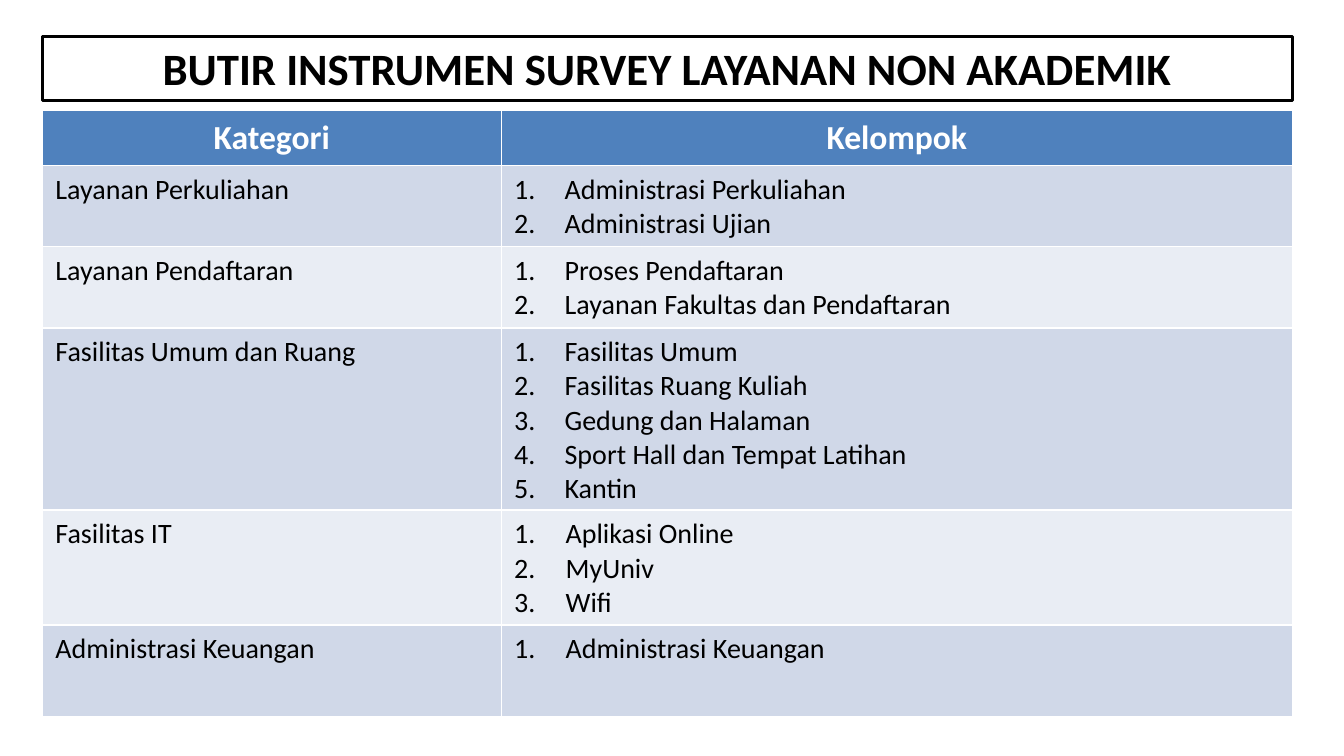
from dataclasses import dataclass

from lxml.etree import SubElement
from pptx import Presentation
from pptx.dml.color import RGBColor
from pptx.enum.shapes import MSO_SHAPE
from pptx.enum.text import MSO_ANCHOR, MSO_AUTO_SIZE, PP_ALIGN
from pptx.oxml.ns import qn
from pptx.util import Inches, Pt


@dataclass(frozen=True)
class Theme:
    font: str = "Calibri"
    ink: RGBColor = RGBColor(0x00, 0x00, 0x00)
    paper: RGBColor = RGBColor(0xFF, 0xFF, 0xFF)
    header: RGBColor = RGBColor(0x4F, 0x81, 0xBD)
    bands: tuple = (RGBColor(0xD0, 0xD8, 0xE8), RGBColor(0xE9, 0xED, 0xF4))
    title_size: int = 32
    header_size: int = 24
    body_size: int = 20


THEME = Theme()
LEFT, WIDTH = 0.42, 12.4
COLUMN_WIDTHS = (4.55, 7.85)
HEADER_HEIGHT = 0.53
HEADINGS = ("Kategori", "Kelompok")
SERVICES = (
    ("Layanan Perkuliahan", 0.8, 0.5,
     ("Administrasi Perkuliahan", "Administrasi Ujian")),
    ("Layanan Pendaftaran", 0.8, 0.5,
     ("Proses Pendaftaran", "Layanan Fakultas dan Pendaftaran")),
    ("Fasilitas Umum dan Ruang", 1.8, 0.5,
     ("Fasilitas Umum", "Fasilitas Ruang Kuliah", "Gedung dan Halaman",
      "Sport Hall dan Tempat Latihan", "Kantin")),
    ("Fasilitas IT", 1.13, 0.51, ("Aplikasi Online", "MyUniv", "Wifi")),
    ("Administrasi Keuangan", 0.91, 0.51, ("Administrasi Keuangan",)),
)


def style_paragraph(para, size, color, bold=False, align=PP_ALIGN.LEFT):
    para.alignment = align
    para.font.name = THEME.font
    para.font.size = Pt(size)
    para.font.bold = bold
    para.font.color.rgb = color


def number_paragraph(para, indent):
    properties = para._p.get_or_add_pPr()
    properties.set("marL", str(Inches(indent)))
    properties.set("indent", str(-Inches(indent)))
    SubElement(properties, qn("a:buFont"), typeface="+mj-lt")
    SubElement(properties, qn("a:buAutoNum"), type="arabicPeriod")


def add_title(page, text):
    box = page.shapes.add_shape(
        MSO_SHAPE.RECTANGLE, Inches(LEFT), Inches(0.36), Inches(WIDTH), Inches(0.64))
    box.shadow.inherit = False
    box.fill.solid()
    box.fill.fore_color.rgb = THEME.paper
    box.line.color.rgb = THEME.ink
    box.line.width = Pt(2)
    frame = box.text_frame
    frame.word_wrap = True
    frame.auto_size = MSO_AUTO_SIZE.SHAPE_TO_FIT_TEXT
    frame.vertical_anchor = MSO_ANCHOR.TOP
    frame.text = text
    style_paragraph(frame.paragraphs[0], THEME.title_size, THEME.ink, True, PP_ALIGN.CENTER)


def fill_cell(cell, lines, fill, indent=None, heading=False):
    cell.fill.solid()
    cell.fill.fore_color.rgb = fill
    cell.margin_left = cell.margin_right = Inches(0.13)
    cell.margin_top = cell.margin_bottom = Inches(0.07)
    cell.text = "\n".join(lines)
    for para in cell.text_frame.paragraphs:
        if indent:
            number_paragraph(para, indent)
        if heading:
            style_paragraph(para, THEME.header_size, THEME.paper, True, PP_ALIGN.CENTER)
        else:
            style_paragraph(para, THEME.body_size, THEME.ink)


def add_service_table(page):
    heights = [HEADER_HEIGHT] + [height for _, height, _, _ in SERVICES]
    table = page.shapes.add_table(
        len(heights), len(HEADINGS), Inches(LEFT), Inches(1.1),
        Inches(WIDTH), Inches(sum(heights))).table
    for column, width in zip(table.columns, COLUMN_WIDTHS):
        column.width = Inches(width)
    for row, height in zip(table.rows, heights):
        row.height = Inches(height)
    for column, heading in enumerate(HEADINGS):
        fill_cell(table.cell(0, column), [heading], THEME.header, heading=True)
    for index, (category, _, indent, groups) in enumerate(SERVICES):
        band = THEME.bands[index % 2]
        fill_cell(table.cell(index + 1, 0), [category], band)
        fill_cell(table.cell(index + 1, 1), groups, band, indent)


def main():
    deck = Presentation()
    deck.slide_width, deck.slide_height = Inches(13.33), Inches(7.5)
    page = deck.slides.add_slide(deck.slide_layouts[6])
    add_title(page, "BUTIR INSTRUMEN SURVEY LAYANAN NON AKADEMIK")
    add_service_table(page)
    deck.save("out.pptx")


if __name__ == "__main__":
    main()
